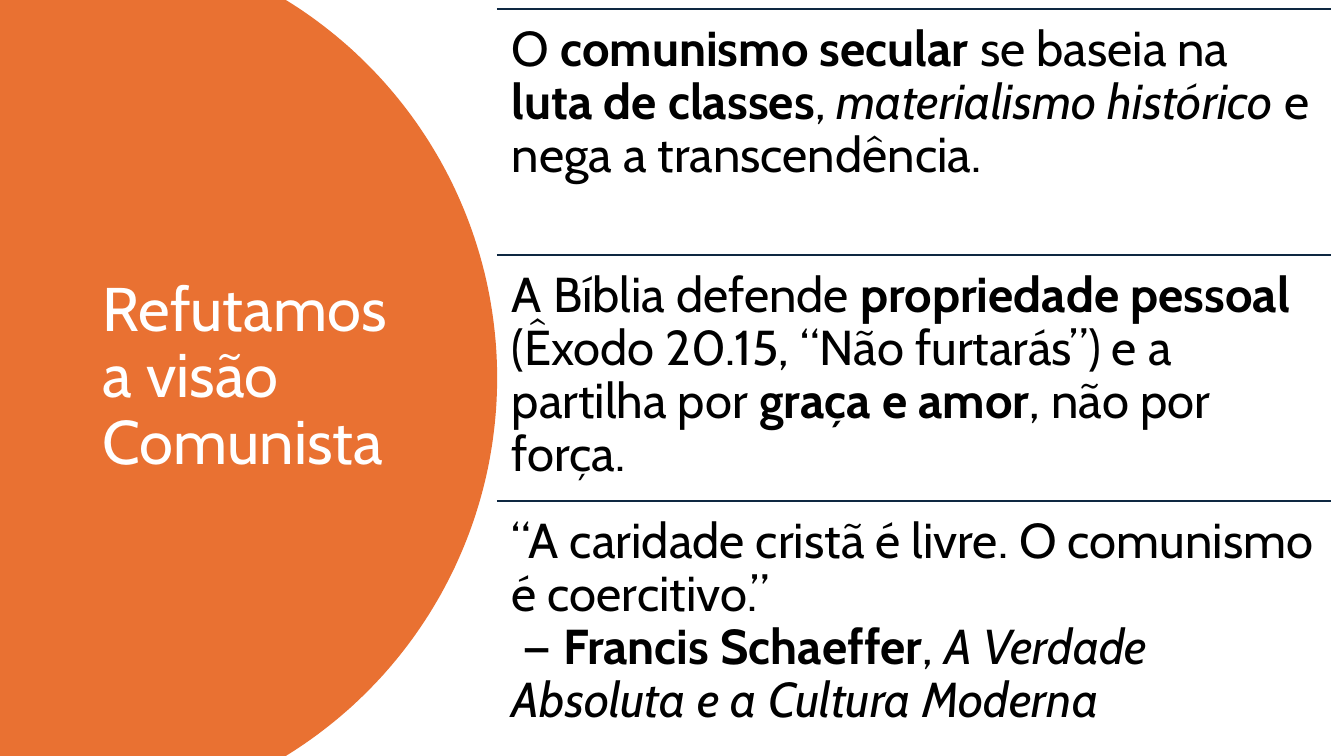
import math

from lxml import etree
from pptx import Presentation
from pptx.dml.color import RGBColor
from pptx.enum.shapes import MSO_CONNECTOR
from pptx.enum.text import MSO_ANCHOR
from pptx.oxml.ns import qn
from pptx.util import Cm, Pt

STRAIGHT = MSO_CONNECTOR.STRAIGHT
TOP, MIDDLE = MSO_ANCHOR.TOP, MSO_ANCHOR.MIDDLE
ORANGE = RGBColor(0xE9, 0x71, 0x32)
NAVY = RGBColor(0x0E, 0x28, 0x41)
BLACK = RGBColor(0, 0, 0)
WHITE = RGBColor(0xFF, 0xFF, 0xFF)
FONT = "Cabin"

# Slide, arc and list geometry in centimetres
WIDTH, HEIGHT = 33.87, 19.05
RADIUS, CENTRE_X = 11.18, 1.35
ARC_STEPS = 120
LIST_LEFT, LIST_TOP, LIST_WIDTH, ROW_HEIGHT = 12.52, 0.23, 21.01, 6.2

# Each piece is (text, style): "b" bold, "i" italic; "\n" breaks the line
TITLE = [("Refutamos a visão Comunista", "")]
ARGUMENTS = [
    [("O ", ""), ("comunismo secular", "b"), (" se baseia na ", ""),
     ("luta de classes", "b"), (", ", ""), ("materialismo histórico", "i"),
     (" e nega a transcendência.", "")],
    [("A Bíblia defende ", ""), ("propriedade pessoal", "b"),
     (" (Êxodo 20.15, “Não furtarás”) e a partilha por ", ""),
     ("graça e amor", "b"), (", não por força.", "")],
    [("“A caridade cristã é livre. O comunismo é coercitivo.”", ""),
     ("\n", ""), (" — ", ""), ("Francis Schaeffer", "b"), (", ", ""),
     ("A Verdade Absoluta e a Cultura Moderna", "i")],
]


def add_panel(s):
    """Orange panel whose right edge is a circular arc."""
    limit = math.asin(HEIGHT / 2 / RADIUS)
    angles = [limit * (2 * i / ARC_STEPS - 1) for i in range(ARC_STEPS + 1)]
    arc = [(Cm(CENTRE_X + RADIUS * math.cos(a)),
            Cm(HEIGHT / 2 + RADIUS * math.sin(a))) for a in angles]
    builder = s.shapes.build_freeform(0, 0)
    builder.add_line_segments(arc + [(0, Cm(HEIGHT))], close=True)
    sp = builder.convert_to_shape()
    sp.shadow.inherit = False
    sp.fill.solid()
    sp.fill.fore_color.rgb = ORANGE
    sp.line.fill.background()


def add_text(s, box, pieces, size, color, anchor=TOP, inset=None):
    sp = s.shapes.add_textbox(*(Cm(v) for v in box))
    tf = sp.text_frame
    tf.word_wrap = True
    tf.vertical_anchor = anchor
    if inset is not None:
        tf.margin_left = tf.margin_right = Cm(inset)
        tf.margin_top = tf.margin_bottom = Cm(inset)
    p = tf.paragraphs[0]
    p.line_spacing = 0.9
    for text, style in pieces:
        if text == "\n":
            p.add_line_break()
            continue
        r = p.add_run()
        r.text = text
        r.font.name = FONT
        r.font.size = Pt(size)
        r.font.color.rgb = color
        r.font.bold = style == "b"
        r.font.italic = style == "i"


def add_rule(s, y):
    line = s.shapes.add_connector(
        STRAIGHT, Cm(LIST_LEFT), Cm(y), Cm(LIST_LEFT + LIST_WIDTH), Cm(y))
    line.line.color.rgb = NAVY
    line.line.width = Pt(1.5)
    etree.SubElement(line._element.spPr, qn("a:effectLst"))


def main():
    prs = Presentation()
    prs.slide_width, prs.slide_height = Cm(WIDTH), Cm(HEIGHT)
    s = prs.slides.add_slide(prs.slide_layouts[6])

    # Title on the panel
    add_panel(s)
    add_text(s, (2.34, 1.78, 8.2, 15.47), TITLE, 44, WHITE, anchor=MIDDLE)

    # Ruled list of arguments
    for i, pieces in enumerate(ARGUMENTS):
        y = LIST_TOP + i * ROW_HEIGHT
        add_rule(s, y)
        add_text(s, (LIST_LEFT, y, LIST_WIDTH, ROW_HEIGHT), pieces, 35, BLACK,
                 inset=0.38)

    prs.save("out.pptx")


if __name__ == "__main__":
    main()
